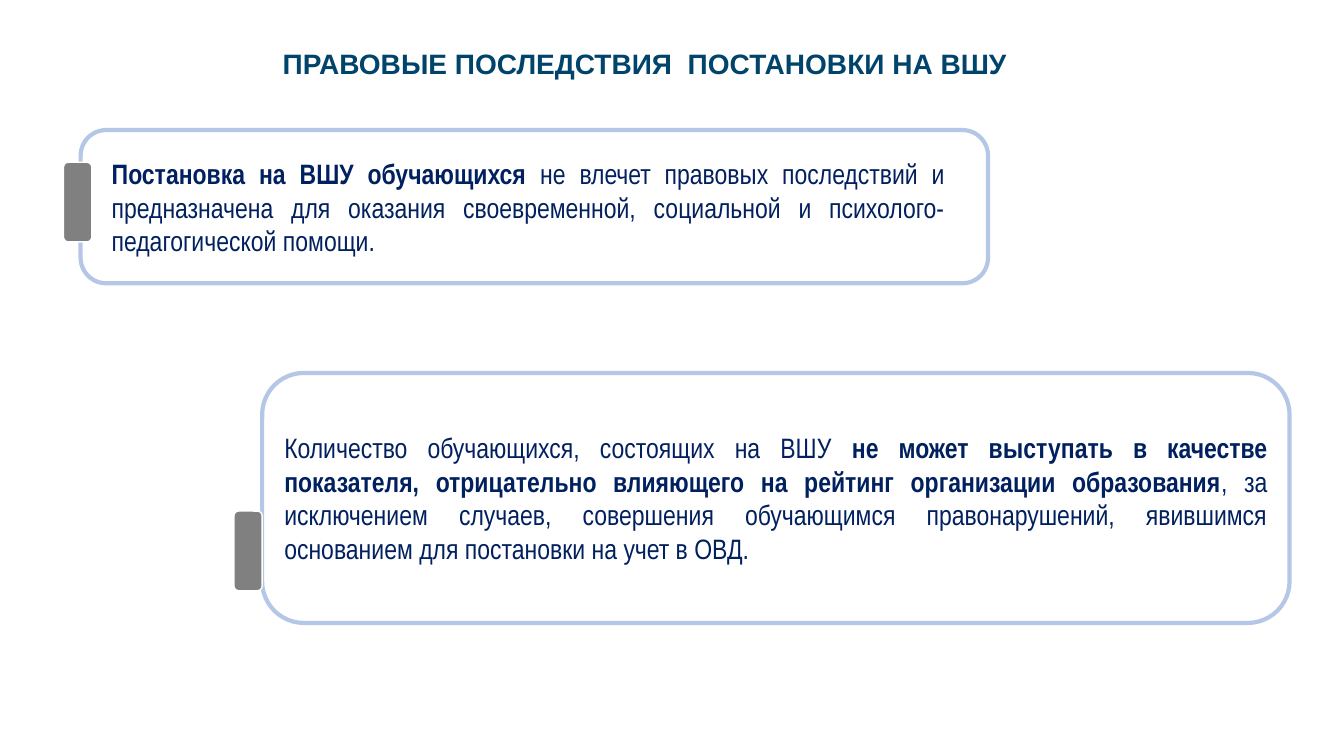
from pptx import Presentation
from pptx import util as u
from pptx.dml.color import RGBColor
from pptx.enum import shapes, text


def colour(value):
    return RGBColor.from_string(value)


class SlideBuilder:
    title_font = "Arial"
    body_font = "Arial Narrow"
    title_colour = "00446B"
    body_colour = "002060"
    frame_colour = "B4C7E7"
    marker_colour = "808080"
    white = "FFFFFF"
    size = 20

    def __init__(self, deck):
        self.slide = deck.slides.add_slide(deck.slide_layouts[5])

    def format_span(self, span, font, hex_colour, bold):
        span.font.name = font
        span.font.size = u.Pt(self.size)
        span.font.bold = bold
        span.font.color.rgb = colour(hex_colour)

    def title(self, wording, left, top, width, height):
        box = self.slide.shapes.title
        box.left, box.top = u.Inches(left), u.Inches(top)
        box.width, box.height = u.Inches(width), u.Inches(height)
        frame = box.text_frame
        frame.text = wording
        frame.word_wrap = True
        frame.auto_size = text.MSO_AUTO_SIZE.NONE
        frame.vertical_anchor = text.MSO_ANCHOR.MIDDLE
        para = frame.paragraphs[0]
        para.alignment = text.PP_ALIGN.CENTER
        para.space_before = u.Pt(0)
        para.line_spacing = 1.0
        self.format_span(para.runs[0], self.title_font, self.title_colour, True)

    def rounded(self, left, top, width, height, fill, line, weight):
        box = self.slide.shapes.add_shape(
            shapes.MSO_SHAPE.ROUNDED_RECTANGLE,
            u.Inches(left), u.Inches(top), u.Inches(width), u.Inches(height))
        box.shadow.inherit = False
        box.fill.solid()
        box.fill.fore_color.rgb = colour(fill)
        box.line.color.rgb = colour(line)
        box.line.width = u.Pt(weight)
        return box

    def panel(self, left, top, width, height):
        return self.rounded(left, top, width, height, self.white, self.frame_colour, 3)

    def marker(self, left, top):
        return self.rounded(left, top, 0.28, 0.79, self.marker_colour, self.white, 1)

    def text_box(self, left, top, width, height):
        return self.slide.shapes.add_textbox(
            u.Inches(left), u.Inches(top), u.Inches(width), u.Inches(height))

    def statement(self, box, parts):
        frame = box.text_frame
        frame.word_wrap = True
        frame.vertical_anchor = text.MSO_ANCHOR.MIDDLE
        para = frame.paragraphs[0]
        para.alignment = text.PP_ALIGN.JUSTIFY
        for wording, bold in parts:
            span = para.add_run()
            span.text = wording
            self.format_span(span, self.body_font, self.body_colour, bold)


def main():
    deck = Presentation()
    deck.slide_width, deck.slide_height = u.Inches(13.33), u.Inches(7.5)
    page = SlideBuilder(deck)

    page.title("ПРАВОВЫЕ ПОСЛЕДСТВИЯ  ПОСТАНОВКИ НА ВШУ", 1.9, 0.41, 8.99, 0.44)

    page.panel(0.8, 1.29, 9, 1.52)
    page.marker(0.63, 1.61)
    page.statement(page.text_box(1.01, 1.5, 8.46, 1.11), [
        ("Постановка на ВШУ обучающихся ", True),
        ("не влечет правовых последствий и предназначена для оказания "
         "своевременной, социальной и психолого-педагогической помощи.", False),
    ])

    rating_panel = page.panel(2.6, 3.7, 10.19, 2.48)
    page.statement(rating_panel, [
        ("Количество обучающихся, состоящих на ВШУ ", False),
        ("не может выступать в качестве показателя, отрицательно влияющего "
         "на рейтинг организации образования", True),
        (", за исключением случаев, совершения обучающимся правонарушений, "
         "явившимся основанием для постановки на учет в ОВД.", False),
    ])
    page.marker(2.32, 5.07)

    deck.save("out.pptx")


if __name__ == "__main__":
    main()
